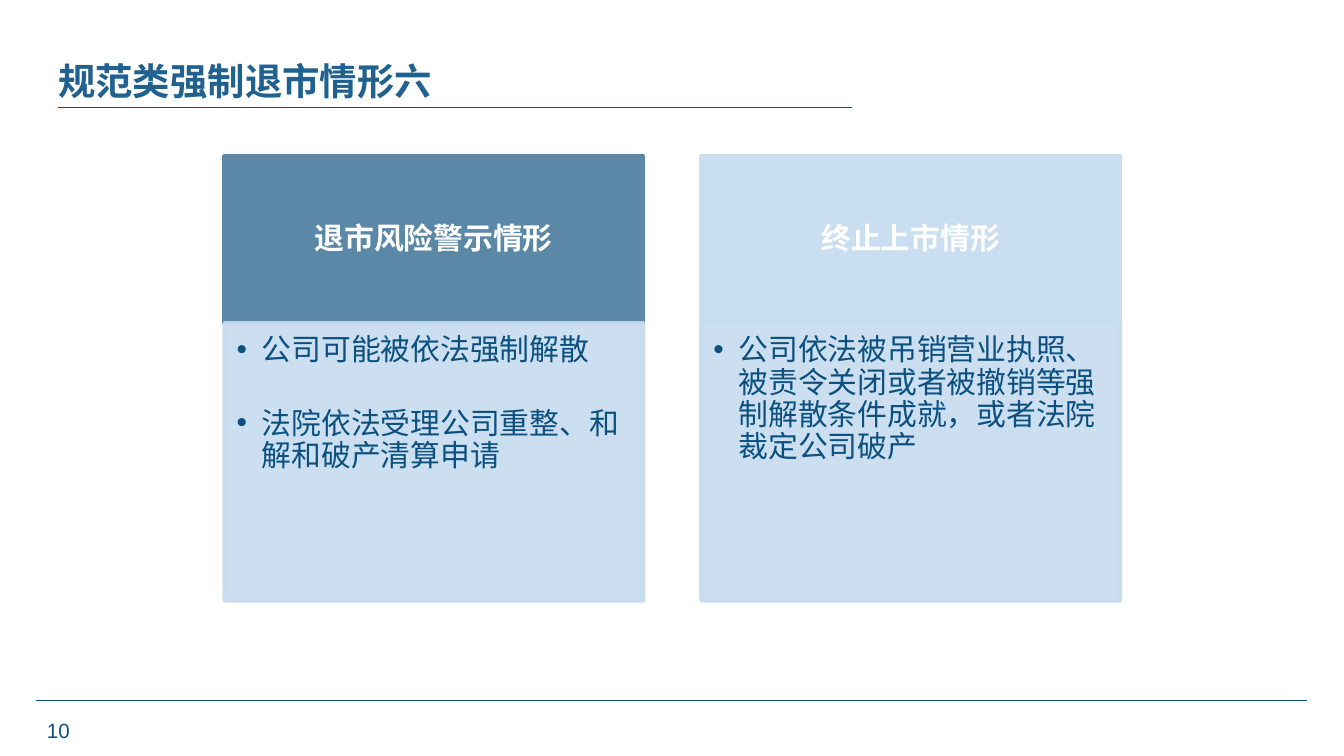
from lxml.etree import SubElement as Sub
from pptx import Presentation
from pptx.dml.color import RGBColor
from pptx.enum.shapes import MSO_CONNECTOR as Link
from pptx.enum.text import MSO_ANCHOR as Anchor, MSO_AUTO_SIZE as Fit, PP_ALIGN as Align
from pptx.oxml.ns import qn
from pptx.util import Cm, Pt

NAVY, TITLE, WHITE = "0C507F", "20618F", "FFFFFF"
STEEL, PALE, PANEL = "5C88A7", "C9DEF0", "C6DCF0"
CJK = "Noto Sans CJK SC"
COMPARE = 4  # template layout: title, then a heading and a list twice

LEFT, WIDTH, STEP = 4.24, 7.92, 9.01
TOP, HEAD, LIST = 2.95, 3.15, 5.25
COLUMNS = [
    ("退市风险警示情形", STEEL,
     ["公司可能被依法强制解散", "法院依法受理公司重整、和解和破产清算申请"]),
    ("终止上市情形", PALE,
     ["公司依法被吊销营业执照、被责令关闭或者被撤销等强制解散条件成就，或者法院裁定公司破产"]),
]


def color(code):
    return RGBColor.from_string(code)


def fade(fill, percent):
    """Make a solid fill partly transparent; percent is the opacity."""
    tone = fill._xPr.find(qn("a:solidFill"))[0]
    Sub(tone, qn("a:alpha")).set("val", str(percent * 1000))


def bullet(para, indent):
    props = para._p.get_or_add_pPr()
    props.set("marL", str(Cm(indent)))
    props.set("indent", str(-Cm(indent)))
    Sub(props, qn("a:buFont")).set("typeface", "Arial")
    Sub(props, qn("a:buChar")).set("char", "•")


def put(shape, lines, size=16, tone=NAVY, font=CJK, bold=False, align=Align.LEFT,
        anchor=Anchor.TOP, inset=(0.25, 0.13, 0.25, 0.13), spacing=1.0, gap=0,
        indent=0):
    """Write lines as paragraphs; gap in points parts them, indent adds bullets."""
    frame = shape.text_frame
    frame.text = "\n".join(lines)
    frame.word_wrap, frame.auto_size = True, Fit.NONE
    frame.vertical_anchor = anchor
    (frame.margin_left, frame.margin_top,
     frame.margin_right, frame.margin_bottom) = map(Cm, inset)
    for i, para in enumerate(frame.paragraphs):
        para.alignment, para.line_spacing = align, spacing
        para.space_before, para.space_after = Pt(gap if i else 0), Pt(0)
        if indent:
            bullet(para, indent)
        for run in para.runs:
            run.font.name, run.font.size, run.font.bold = font, Pt(size), bold
            run.font.color.rgb = color(tone)
            Sub(run._r.get_or_add_rPr(), qn("a:ea")).set("typeface", font)


class Deck:
    def __init__(self):
        self.prs = Presentation()
        self.prs.slide_width, self.prs.slide_height = Cm(25.4), Cm(14.28)
        self.slide = self.prs.slides.add_slide(self.prs.slide_layouts[COMPARE])

    def place(self, idx, *box):
        """Move a placeholder to left, top, width, height in cm."""
        holder = self.slide.placeholders[idx]
        (holder.left, holder.top,
         holder.width, holder.height) = map(Cm, box)
        return holder

    def rule(self, x1, x2, y):
        line = self.slide.shapes.add_connector(
            Link.STRAIGHT, Cm(x1), Cm(y), Cm(x2), Cm(y))
        line.line.color.rgb, line.line.width = color(NAVY), Pt(0.5)
        Sub(line._element.spPr, qn("a:effectLst"))

    def title(self, text):
        put(self.place(0, 0.85, 0.97, 16.2, 1.12), [text], size=20, tone=TITLE,
            bold=True, anchor=Anchor.MIDDLE)

    def number(self, text):
        box = self.slide.shapes.add_textbox(Cm(0.51), Cm(13.44), Cm(1.19), Cm(0.61))
        put(box, [text], size=11, font="Arial", align=Align.CENTER,
            inset=(0, 0.13, 0, 0.13))

    def paint(self, shape, tone, opacity=100):
        shape.fill.solid()
        shape.fill.fore_color.rgb = color(tone)
        shape.line.color.rgb, shape.line.width = color(tone), Pt(2)
        if opacity < 100:
            fade(shape.fill, opacity)
            fade(shape.line.fill, opacity)

    def column(self, pos, head, tone, items):
        left = LEFT + pos * STEP
        top = self.place(1 + 2 * pos, left, TOP, WIDTH, HEAD)
        self.paint(top, tone)
        put(top, [head], tone=WHITE, bold=True, align=Align.CENTER,
            anchor=Anchor.MIDDLE, inset=(0.3, 0.17, 0.3, 0.17), spacing=0.9)
        body = self.place(2 + 2 * pos, left, TOP + HEAD, WIDTH, LIST)
        self.paint(body, PANEL, opacity=90)
        put(body, items, inset=(0.23, 0.23, 0.3, 0.36), spacing=0.9, gap=22,
            indent=0.48)


def main():
    deck = Deck()
    deck.rule(0.69, 24.71, 13.23)
    deck.rule(1.09, 16.1, 2.03)
    deck.title("规范类强制退市情形六")
    for pos, column in enumerate(COLUMNS):
        deck.column(pos, *column)
    deck.number("10")
    deck.prs.save("out.pptx")


if __name__ == "__main__":
    main()
